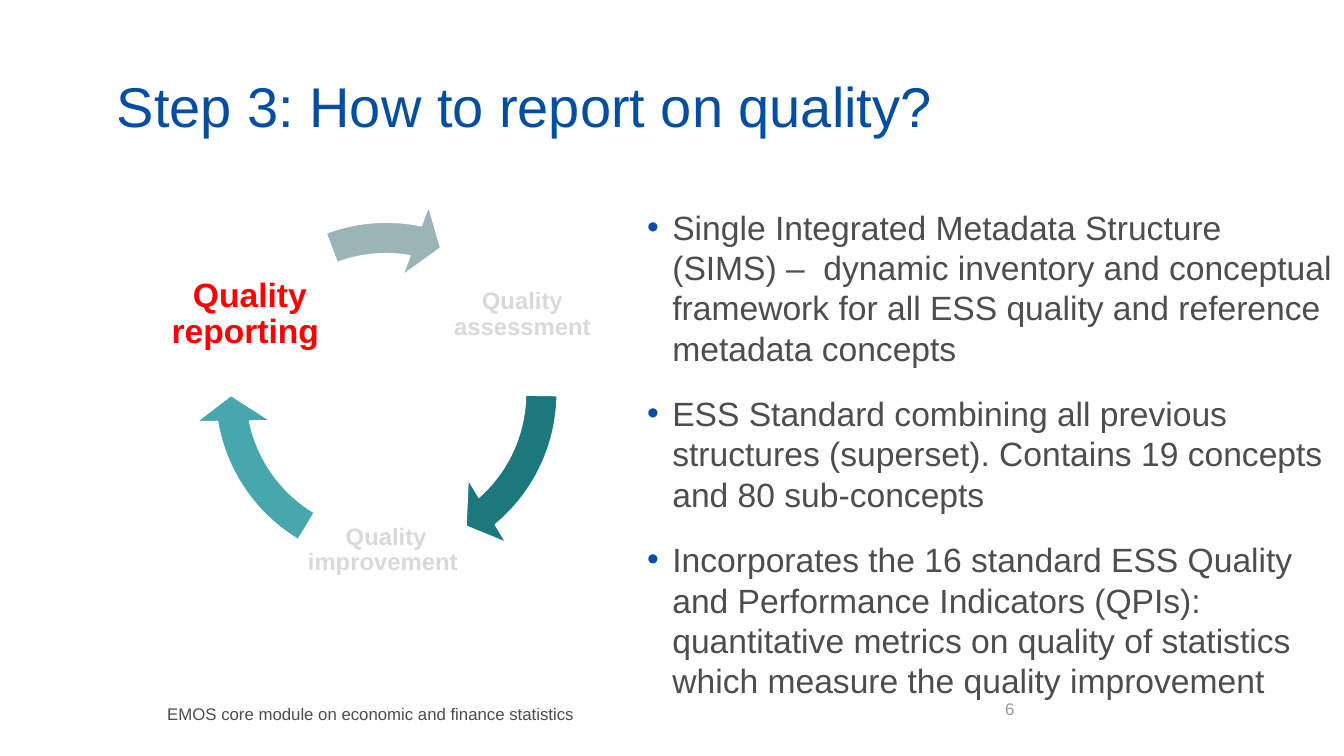
from math import cos, radians, sin
from lxml import etree
from pptx import Presentation
from pptx import util as u
from pptx.dml.color import RGBColor
from pptx.enum import shapes, text
from pptx.oxml.ns import qn

BLUE = RGBColor(0x03, 0x4E, 0xA2)
GREY = RGBColor(0x4D, 0x4D, 0x4D)
MID = RGBColor(0x97, 0x97, 0x97)
PALE = RGBColor(0xD9, 0xD9, 0xD9)
RED = RGBColor(0xFF, 0x00, 0x00)
WHITE = RGBColor(0xFF, 0xFF, 0xFF)
DARK = RGBColor(0x1B, 0x79, 0x7E)
TEAL = RGBColor(0x48, 0xA6, 0xAD)
MIST = RGBColor(0x99, 0xB5, 0xB8)
TOP, MID_V, LOW = (text.MSO_ANCHOR.TOP, text.MSO_ANCHOR.MIDDLE,
                   text.MSO_ANCHOR.BOTTOM)

deck = Presentation()
deck.slide_width, deck.slide_height = u.Inches(13.33), u.Inches(7.5)
slide = deck.slides.add_slide(deck.slide_layouts[6])


def style(par, size, color, bold=False):
    font = par.font
    font.name, font.size, font.bold = "Arial", u.Pt(size), bold
    font.color.rgb = color


def label(words, at, size, color, anchor=TOP, bold=False):
    box = slide.shapes.add_textbox(*[u.Inches(n) for n in at])
    frame = box.text_frame
    frame.word_wrap, frame.vertical_anchor = True, anchor
    frame.text = words
    for par in frame.paragraphs:
        style(par, size, color, bold)
    return frame


# Title, footer and slide number
head = label("Step 3: How to report on quality?",
             (1.06, 0.53, 11.5, 0.86), 40, BLUE, LOW)
head.margin_bottom = 0
head.paragraphs[0].line_spacing = 0.9
label("EMOS core module on economic and finance statistics",
      (1.56, 6.93, 6.08, 0.3), 12, GREY)
label("6", (9.87, 6.83, 3, 0.4), 12, MID, MID_V)

# Bulleted text
points = [
    "Single Integrated Metadata Structure (SIMS) –  dynamic inventory and "
    "conceptual framework for all ESS quality and reference metadata concepts",
    "ESS Standard combining all previous structures (superset). "
    "Contains 19 concepts and 80 sub-concepts",
    "Incorporates the 16 standard ESS Quality and Performance Indicators "
    "(QPIs): quantitative metrics on quality of statistics which measure "
    "the quality improvement",
]
body = label("\n".join(points), (6.32, 2, 7.02, 4.84), 24, GREY)
for par in body.paragraphs:
    par.space_after = u.Pt(18)
    props = par._p.get_or_add_pPr()
    props.set("marL", str(u.Inches(0.25)))
    props.set("indent", str(-u.Inches(0.25)))
    run = props.find(qn("a:defRPr"))
    props.remove(run)
    tint = etree.SubElement(props, qn("a:buClr"))
    etree.SubElement(tint, qn("a:srgbClr"), val=str(BLUE))
    etree.SubElement(props, qn("a:buFont"), typeface="Arial")
    etree.SubElement(props, qn("a:buChar"), char="•")
    style(par, 24, GREY)

# Quality cycle: labels on a circle, each followed by an arrow
MID_X, MID_Y, REACH = 3.83, 3.9, 1.56
SIDE, RING = 1.61, 3.81
steps = [
    ("Quality assessment", 17, PALE, DARK, 29.654, 0.507),
    ("Quality improvement ", 17, PALE, TEAL, 101.735, 72.588),
    ("Quality reporting ", 24, RED, MIST, 168.581, 149.661),
]
for i, (words, size, color, fill, end, start) in enumerate(steps):
    turn = radians(120 * i - 30)
    left = MID_X + REACH * cos(turn) - SIDE / 2
    top = MID_Y + REACH * sin(turn) - SIDE / 2
    frame = label(words, (left, top, SIDE, SIDE), size, color, MID_V, True)
    frame.margin_left = frame.margin_right = u.Inches(0.02)
    frame.margin_top = frame.margin_bottom = u.Inches(0.02)
    par = frame.paragraphs[0]
    par.alignment, par.line_spacing = text.PP_ALIGN.CENTER, 0.9

    arrow = slide.shapes.add_shape(
        shapes.MSO_SHAPE.CIRCULAR_ARROW, u.Inches(MID_X - RING / 2),
        u.Inches(MID_Y - RING / 2), u.Inches(RING), u.Inches(RING))
    for k, value in enumerate((0.082, 5.758, end, start, 0.096)):
        arrow.adjustments[k] = value
    arrow.shadow.inherit = False
    arrow.fill.solid()
    arrow.fill.fore_color.rgb = fill
    arrow.line.color.rgb = WHITE
    arrow.line.width = u.Pt(1)

deck.save("out.pptx")
